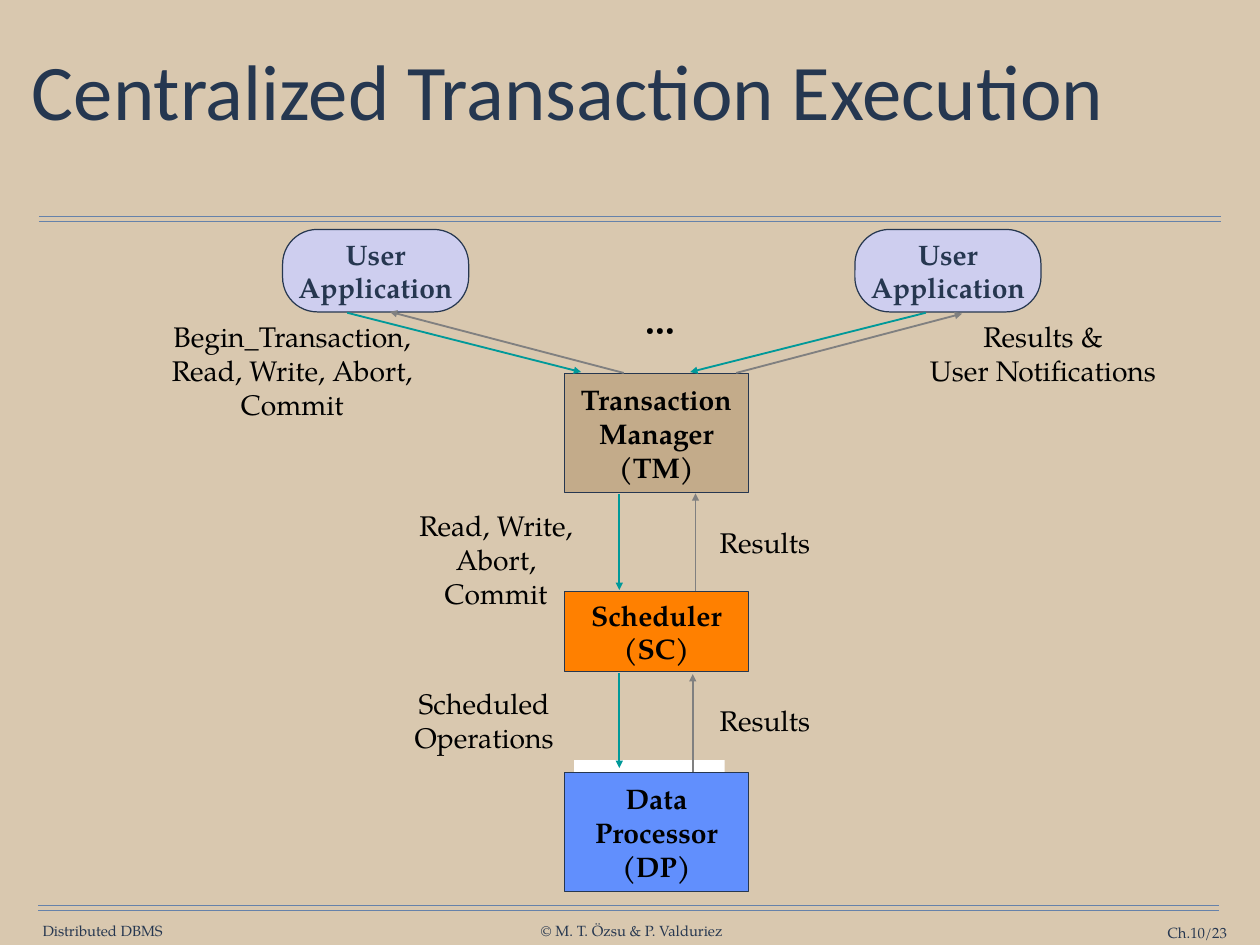
from dataclasses import dataclass

from lxml.etree import SubElement
from pptx import Presentation
from pptx.dml.color import RGBColor
from pptx.enum.shapes import MSO_CONNECTOR, MSO_SHAPE
from pptx.enum.text import MSO_ANCHOR, PP_ALIGN
from pptx.oxml.ns import qn
from pptx.util import Pt


@dataclass(frozen=True)
class Theme:
    background: str = "D9C8AF"
    navy: str = "263750"
    title: str = "253750"
    black: str = "000000"
    white: str = "FFFFFF"
    rule: str = "6682AA"
    request: str = "009999"
    reply: str = "808080"
    application: str = "CECEEF"
    manager: str = "C3AB8A"
    scheduler: str = "FF8000"
    processor: str = "618FFD"
    heading_font: str = "Calibri"
    body_font: str = "TeX Gyre Pagella"
    title_size: int = 64
    ellipsis_size: int = 30
    body_size: int = 23
    footer_size: int = 12


theme = Theme()


def write(box, text, size, color, bold=False, align=PP_ALIGN.CENTER,
          font=theme.body_font, wrap=False, inset=0):
    frame = box.text_frame
    frame.text = text
    frame.word_wrap = wrap
    frame.vertical_anchor = MSO_ANCHOR.MIDDLE
    frame.margin_left = frame.margin_right = Pt(inset)
    frame.margin_top = frame.margin_bottom = Pt(inset / 2)
    for para in frame.paragraphs:
        para.alignment = align
        for span in para.runs:
            span.font.name = font
            span.font.size = Pt(size)
            span.font.bold = bold
            span.font.color.rgb = RGBColor.from_string(color)


def connect(start, end, color, width, arrow=False):
    line = page.shapes.add_connector(
        MSO_CONNECTOR.STRAIGHT, *(Pt(value) for value in (*start, *end)))
    line.line.color.rgb = RGBColor.from_string(color)
    line.line.width = Pt(width)
    properties = line._element.spPr
    if arrow:
        SubElement(properties.find(qn("a:ln")), qn("a:tailEnd"), type="triangle")
    SubElement(properties, qn("a:effectLst"))


deck = Presentation()
deck.slide_width, deck.slide_height = Pt(1024), Pt(768)
page = deck.slides.add_slide(deck.slide_layouts[6])
page.background.fill.solid()
page.background.fill.fore_color.rgb = RGBColor.from_string(theme.background)

for left, right, top in [(31.7, 992.2, 175.7), (31, 990.7, 735.8)]:
    for y in (top, top + 4.4):
        connect((left, y), (right, y), theme.rule, 1)

footers = [
    ("Distributed DBMS", 33.8, 749.5, 99.4, PP_ALIGN.CENTER),
    ("© M. T. Özsu & P. Valduriez", 438.5, 749.5, 149.8, PP_ALIGN.CENTER),
    ("Ch.10/23", 886.3, 751, 110.9, PP_ALIGN.RIGHT),
]
for text, left, top, width, align in footers:
    box = page.shapes.add_textbox(Pt(left), Pt(top), Pt(width), Pt(14.4))
    write(box, text, theme.footer_size, theme.navy, align=align)

title = page.shapes.add_textbox(Pt(21.6), Pt(13), Pt(966.2), Pt(128.2))
write(title, "Centralized Transaction Execution", theme.title_size, theme.title,
      align=PP_ALIGN.LEFT, font=theme.heading_font, wrap=True, inset=4.4)
title.text_frame.paragraphs[0].line_spacing = 0.9

rounded, square = MSO_SHAPE.ROUNDED_RECTANGLE, MSO_SHAPE.RECTANGLE
components = [
    ("", square, 466.6, 617.8, 122.4, 51.1, theme.white, None),
    ("User\nApplication", rounded, 229.7, 186.5, 151.2, 67,
     theme.application, theme.navy),
    ("User\nApplication", rounded, 694.8, 186.5, 151.2, 67,
     theme.application, theme.navy),
    ("Transaction\nManager\n(TM)", square, 458.6, 303.8, 149.8, 96.5,
     theme.manager, theme.black),
    ("Scheduler\n(SC)", square, 458.6, 481, 149.8, 64.8,
     theme.scheduler, theme.black),
    ("Data\nProcessor\n(DP)", square, 458.6, 627.8, 149.8, 96.5,
     theme.processor, theme.black),
]
for text, kind, left, top, width, height, fill, ink in components:
    box = page.shapes.add_shape(kind, Pt(left), Pt(top), Pt(width), Pt(height))
    box.shadow.inherit = False
    box.fill.solid()
    box.fill.fore_color.rgb = RGBColor.from_string(fill)
    if kind == rounded:
        box.adjustments[0] = 0.42
    if text:
        box.line.color.rgb = RGBColor.from_string(theme.navy)
        box.line.width = Pt(1)
        write(box, text, theme.body_size, ink, bold=True)
    else:
        box.line.fill.background()

requests = [
    ((282.2, 254.2), (472.3, 302.4)),
    ((752.4, 254.2), (560.9, 302.4)),
    ((503.3, 401.8), (503.3, 479.5)),
    ((503.3, 547.2), (503.3, 624.2)),
]
replies = [
    ((506.9, 303.1), (316.8, 253.4)),
    ((598.3, 303.1), (781.9, 254.9)),
    ((565.2, 480.2), (565.2, 401)),
    ((563, 627.1), (563, 547.9)),
]
for color, arrows in [(theme.request, requests), (theme.reply, replies)]:
    for start, end in arrows:
        connect(start, end, color, 1.5, arrow=True)

labels = [
    ("Begin_Transaction,\nRead, Write, Abort, Commit", 96.5, 254.2, 282.2, 93.6, True),
    ("Results &\nUser Notifications", 743, 254.2, 209.5, 66.2, True),
    ("Read, Write,\nAbort, Commit", 326.9, 407.5, 152.6, 93.6, True),
    ("Scheduled\nOperations", 326.2, 552.2, 134.6, 65.5, False),
    ("Results", 573.1, 421.2, 97.2, 38.9, False),
    ("Results", 573.1, 565.9, 97.2, 38.9, False),
]
for text, left, top, width, height, wrap in labels:
    box = page.shapes.add_textbox(Pt(left), Pt(top), Pt(width), Pt(height))
    write(box, text, theme.body_size, theme.black, wrap=wrap, inset=10)

ellipsis = page.shapes.add_textbox(Pt(511.9), Pt(236.9), Pt(50.4), Pt(46.1))
write(ellipsis, "…", theme.ellipsis_size, theme.black, bold=True, inset=10)

deck.save("out.pptx")
